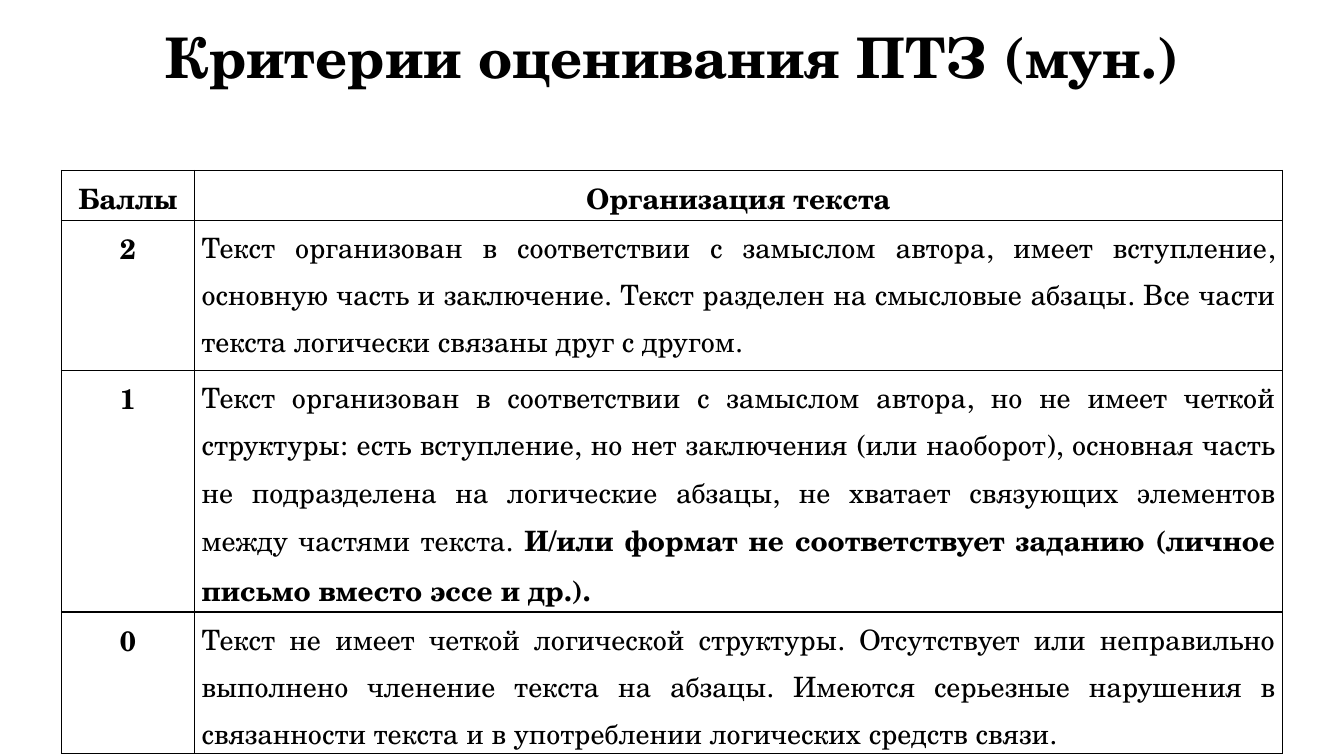
from lxml import etree
from pptx import Presentation
from pptx.dml.color import RGBColor
from pptx.enum.text import MSO_ANCHOR, PP_ALIGN
from pptx.oxml.ns import qn
from pptx.util import Inches, Pt

CENTER, JUSTIFY = PP_ALIGN.CENTER, PP_ALIGN.JUSTIFY
TOP, MIDDLE = MSO_ANCHOR.TOP, MSO_ANCHOR.MIDDLE
COLORS = {"text": "000000", "paper": "FFFFFF", "border": "000000"}
FONT = "TeX Gyre Schola"
COLUMN_WIDTHS = [1.32, 10.79]
ROW_HEIGHTS = [0.43, 1.49, 2.14, 0.9]
CRITERIA = [
    ("Баллы", [("Организация текста", True)]),
    ("2", [("Текст организован в соответствии с замыслом автора, имеет вступление, "
            "основную часть и заключение. Текст разделен на смысловые абзацы. "
            "Все части текста логически связаны друг с другом.", False)]),
    ("1", [("Текст организован в соответствии с замыслом автора, но не имеет четкой "
            "структуры: есть вступление, но нет заключения (или наоборот), основная "
            "часть не подразделена на логические абзацы, не хватает связующих "
            "элементов между частями текста. ", False),
           ("И/или формат не соответствует заданию (личное письмо вместо эссе и др.).",
            True)]),
    ("0", [("Текст не имеет четкой логической структуры. Отсутствует или неправильно "
            "выполнено членение текста на абзацы. Имеются серьезные нарушения в "
            "связанности текста и в употреблении логических средств связи.", False)]),
]


def write_runs(para, runs, size, align, spacing):
    para.alignment = align
    para.line_spacing = spacing
    para.space_before = Pt(0)
    for text, bold in runs:
        span = para.add_run()
        span.text = text
        span.font.name = FONT
        span.font.size = Pt(size)
        span.font.bold = bold
        span.font.color.rgb = RGBColor.from_string(COLORS["text"])


def style_cell(cell):
    cell.margin_left = cell.margin_right = Inches(0.07)
    cell.margin_top = cell.margin_bottom = 0
    cell.vertical_anchor = TOP
    properties = cell._tc.get_or_add_tcPr()
    for side in ("a:lnL", "a:lnR", "a:lnT", "a:lnB"):
        line = etree.SubElement(properties, qn(side), w=str(Pt(1)))
        paint = etree.SubElement(line, qn("a:solidFill"))
        etree.SubElement(paint, qn("a:srgbClr"), val=COLORS["border"])
    cell.fill.solid()
    cell.fill.fore_color.rgb = RGBColor.from_string(COLORS["paper"])


deck = Presentation()
deck.slide_width, deck.slide_height = Inches(13.33), Inches(7.5)
page = deck.slides.add_slide(deck.slide_layouts[5])
page.background.fill.solid()
page.background.fill.fore_color.rgb = RGBColor.from_string(COLORS["paper"])

title = page.shapes.title
title.left, title.top = Inches(0.92), Inches(0.21)
title.width, title.height = Inches(11.5), Inches(0.78)
title.text_frame.vertical_anchor = MIDDLE
write_runs(title.text_frame.paragraphs[0],
           [("Критерии оценивания ПТЗ (мун.)", True)], 40, CENTER, 0.9)

frame = page.shapes.add_table(len(ROW_HEIGHTS), len(COLUMN_WIDTHS),
                              Inches(0.61), Inches(1.69),
                              Inches(sum(COLUMN_WIDTHS)), Inches(sum(ROW_HEIGHTS)))
table = frame.table
table.first_row = table.horz_banding = False
for column, width in zip(table.columns, COLUMN_WIDTHS):
    column.width = Inches(width)

for index, (score, description) in enumerate(CRITERIA):
    table.rows[index].height = Inches(ROW_HEIGHTS[index])
    description_align = JUSTIFY if index else CENTER
    contents = [([(score, True)], CENTER), (description, description_align)]
    for cell, (runs, align) in zip(table.rows[index].cells, contents):
        style_cell(cell)
        para = cell.text_frame.paragraphs[0]
        write_runs(para, runs, 20, align, 1.15)
        para.space_after = Pt(2)

deck.save("out.pptx")
